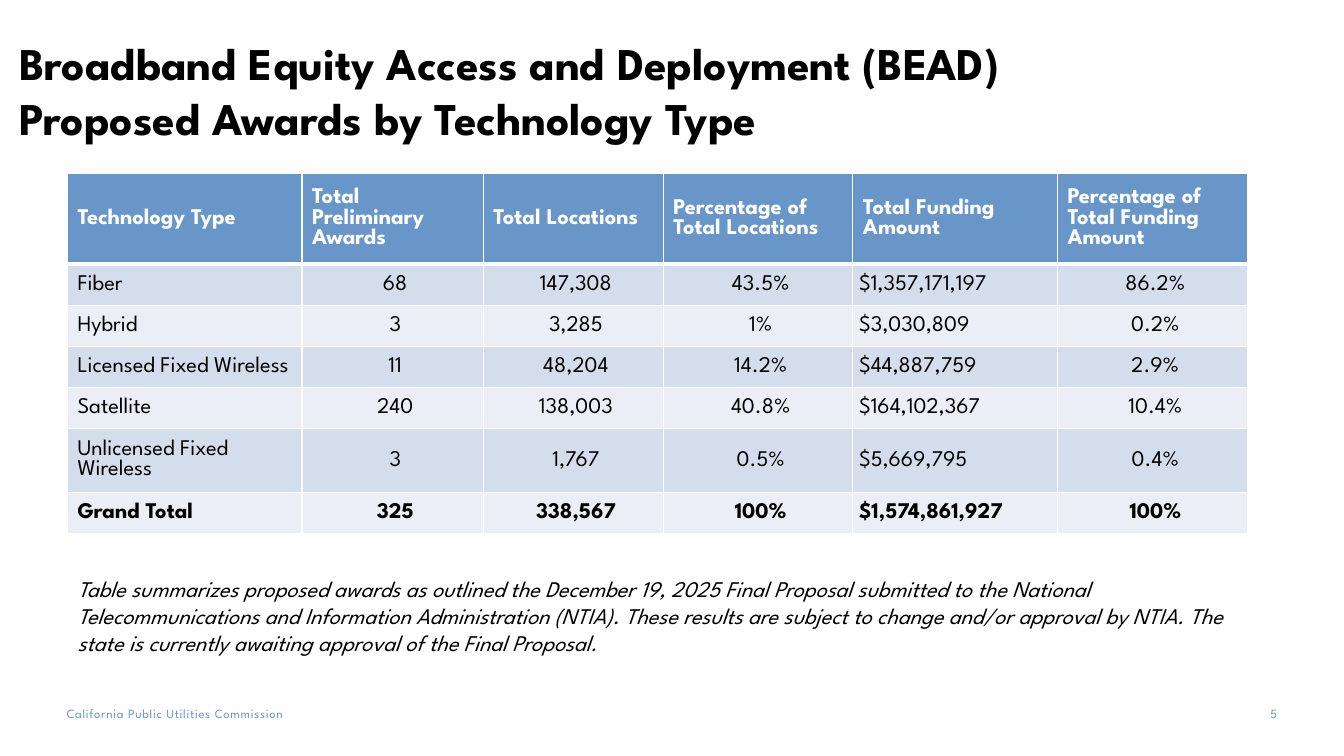
from lxml import etree
from pptx import Presentation
from pptx.dml.color import RGBColor
from pptx.enum import text
from pptx.oxml import ns
from pptx.util import Pt

BLUE = RGBColor(0x69, 0x96, 0xC9)
DARK = RGBColor(0xD4, 0xDD, 0xEB)
PALE = RGBColor(0xEB, 0xEF, 0xF5)
WHITE = RGBColor(0xFF, 0xFF, 0xFF)
BLACK = RGBColor(0, 0, 0)
LEFT, MID, RIGHT = text.PP_ALIGN.LEFT, text.PP_ALIGN.CENTER, text.PP_ALIGN.RIGHT


def write(frame, words, size, color, align=LEFT, **style):
    para = frame.paragraphs[0]
    para.text = words
    para.alignment = align
    for run in para.runs:
        run.font.color.rgb = color
        for key, val in {"name": "League Spartan", "size": Pt(size), **style}.items():
            setattr(run.font, key, val)
    return para


def add_box(x, y, w, h, pads, anchor=text.MSO_ANCHOR.TOP):
    frame = slide.shapes.add_textbox(Pt(x), Pt(y), Pt(w), Pt(h)).text_frame
    frame.word_wrap = True
    frame.vertical_anchor = anchor
    for side, pad in zip(("left", "top", "right", "bottom"), pads):
        setattr(frame, f"margin_{side}", Pt(pad))
    return frame


deck = Presentation()
deck.slide_width, deck.slide_height = Pt(960), Pt(540)
slide = deck.slides.add_slide(deck.slide_layouts[6])

# Footer and page number
foot = add_box(47.5, 504, 231, 11, (0, 0, 0, 0))
para = write(foot, "California Public Utilities Commission", 9, BLUE)
para.runs[0].font._element.set("spc", "50")
page = add_box(882, 504, 30.2, 14.4, (0, 0, 0, 0))
write(page, "5", 9, BLUE, RIGHT)

# Title
title = add_box(13.7, 34.6, 936.7, 72, (0, 3.6, 7.2, 3.6), text.MSO_ANCHOR.BOTTOM)
write(title, "Broadband Equity Access and Deployment (BEAD)\vProposed Awards by Technology Type",
      32.4, BLACK, bold=True)

# Awards table
rows = [
    ("Technology Type", "Total Preliminary Awards", "Total Locations",
     "Percentage of Total Locations", "Total Funding Amount",
     "Percentage of Total Funding Amount"),
    ("Fiber", "68", "147,308", "43.5%", "$1,357,171,197", "86.2%"),
    ("Hybrid", "3", "3,285", "1%", "$3,030,809", "0.2%"),
    ("Licensed Fixed Wireless", "11", "48,204", "14.2%", "$44,887,759", "2.9%"),
    ("Satellite", "240", "138,003", "40.8%", "$164,102,367", "10.4%"),
    ("Unlicensed Fixed Wireless", "3", "1,767", "0.5%", "$5,669,795", "0.4%"),
    ("Grand Total", "325", "338,567", "100%", "$1,574,861,927", "100%"),
]
widths = [167.6, 129.4, 128.7, 135.4, 146.1, 136.1]
last = len(rows) - 1
table = slide.shapes.add_table(len(rows), len(widths), Pt(48.2), Pt(124),
                               Pt(sum(widths)), Pt(29.3 * len(rows))).table
for col, width in zip(table.columns, widths):
    col.width = Pt(width)

for r, row in enumerate(rows):
    table.rows[r].height = Pt(29.3)
    for c, words in enumerate(row):
        cell = table.cell(r, c)
        cell.vertical_anchor = text.MSO_ANCHOR.MIDDLE
        figure = r > 0 and c > 0
        if figure:
            pads = {"left": 4.4, "top": 0.7, "right": 0.7, "bottom": 0}
            for side, pad in pads.items():
                setattr(cell, f"margin_{side}", Pt(pad))
        # White rules, thicker under the header
        thick = {(0, "B"), (1, "T")}
        for side in "LRTB":
            line = etree.SubElement(cell._tc.get_or_add_tcPr(), ns.qn(f"a:ln{side}"),
                                    w=str(Pt(3 if (r, side) in thick else 1)))
            fill = etree.SubElement(line, ns.qn("a:solidFill"))
            etree.SubElement(fill, ns.qn("a:srgbClr"), val=str(WHITE))
        cell.fill.solid()
        cell.fill.fore_color.rgb = BLUE if r == 0 else DARK if r % 2 else PALE
        write(cell.text_frame, words, 16, BLACK if r else WHITE,
              MID if figure and c != 4 else LEFT, bold=r in (0, last))

# Note below the table
note = add_box(48.4, 407.5, 843.9, 65.5, (7.2, 3.6, 7.2, 3.6))
write(note, "Table summarizes proposed awards as outlined the December 19, 2025 Final Proposal "
      "submitted to the National Telecommunications and Information Administration (NTIA). "
      "These results are subject to change and/or approval by NTIA. The state is currently "
      "awaiting approval of the Final Proposal.", 16, BLACK, italic=True)

deck.save("out.pptx")
